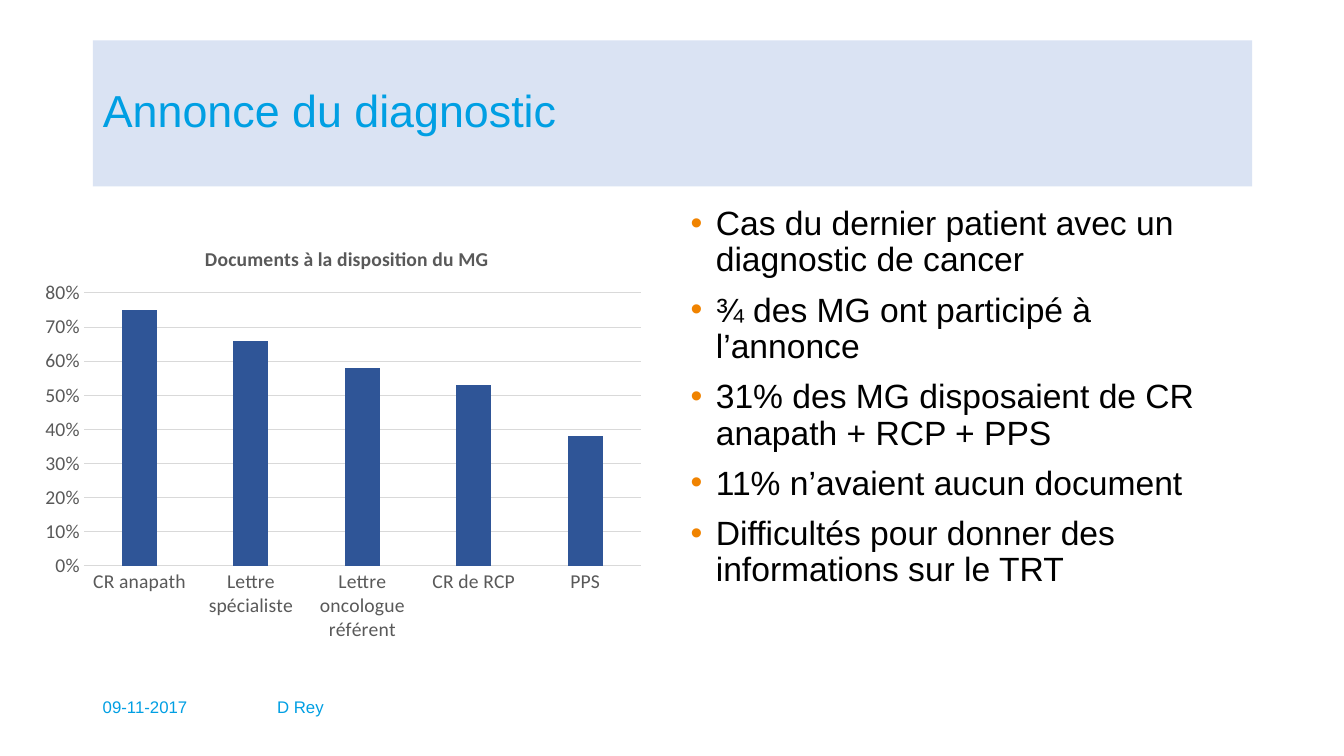
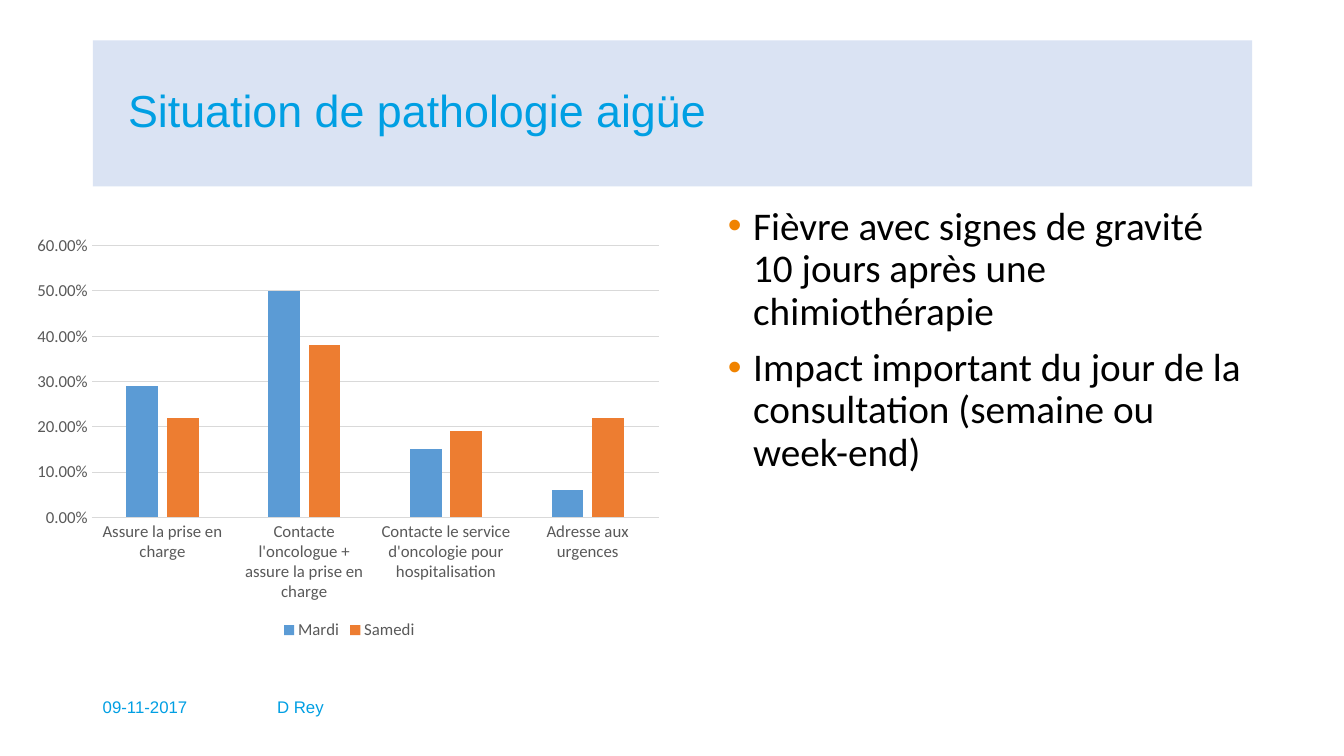
from dataclasses import dataclass

from lxml.etree import SubElement
from pptx import Presentation
from pptx.chart.chart import Chart
from pptx.chart.data import CategoryChartData
from pptx.dml.color import RGBColor
from pptx.enum.chart import XL_CHART_TYPE, XL_LEGEND_POSITION, XL_TICK_MARK
from pptx.enum.text import MSO_ANCHOR, MSO_AUTO_SIZE, PP_ALIGN
from pptx.oxml import parse_xml
from pptx.oxml.ns import nsdecls, qn
from pptx.slide import Slide
from pptx.text.text import Font
from pptx.util import Inches, Pt

BLACK = RGBColor(0x00, 0x00, 0x00)
CYAN = RGBColor(0x00, 0x9F, 0xE3)
PALE_BLUE = RGBColor(0xDA, 0xE3, 0xF3)
BULLET_ORANGE = RGBColor(0xF0, 0x83, 0x00)
NAVY = RGBColor(0x2F, 0x55, 0x97)
BLUE = RGBColor(0x5B, 0x9B, 0xD5)
ORANGE = RGBColor(0xED, 0x7D, 0x31)
AXIS_GREY = RGBColor(0x59, 0x59, 0x59)
GRID_GREY = RGBColor(0xD9, 0xD9, 0xD9)

SANS = "Arial"
CHART_FONT = "Calibri"
LINE_SPACING = 0.9
MARGIN_LEFT = 0.92
BODY_TOP = 2.0
CONTENT_RIGHT = 12.42


@dataclass(frozen=True)
class FooterItem:
    text: str
    left: float
    width: float


@dataclass(frozen=True)
class Series:
    name: str
    values: tuple[float, ...]
    color: RGBColor


@dataclass(frozen=True)
class ColumnChart:
    box: tuple[float, float, float, float]
    plot_area: tuple[float, float, float, float]
    categories: tuple[str, ...]
    series: tuple[Series, ...]
    maximum: float
    number_format: str
    label_size: int
    title: str = ""


@dataclass(frozen=True)
class Page:
    title: str
    title_inset: float
    points: tuple[str, ...]
    points_left: float
    points_height: float
    points_font: str
    points_size: int
    chart: ColumnChart


FOOTER = (
    FooterItem("09-11-2017", MARGIN_LEFT, 1.58),
    FooterItem("D Rey", 2.65, 2.64),
)

PAGES = (
    Page(
        title="Annonce du diagnostic",
        title_inset=0.1,
        points=(
            "Cas du dernier patient avec un diagnostic de cancer",
            "¾ des MG ont participé à l’annonce",
            "31% des MG disposaient de CR anapath + RCP + PPS",
            "11% n’avaient aucun document",
            "Difficultés pour donner des informations sur le TRT",
        ),
        points_left=6.75,
        points_height=4.46,
        points_font=SANS,
        points_size=24,
        chart=ColumnChart(
            box=(0.34, 2.23, 6.14, 4.23),
            plot_area=(0.08, 0.16, 0.9, 0.64),
            categories=(
                "CR anapath",
                "Lettre spécialiste",
                "Lettre oncologue référent",
                "CR de RCP",
                "PPS",
            ),
            series=(Series("Series 1", (0.75, 0.66, 0.58, 0.53, 0.38), NAVY),),
            maximum=0.8,
            number_format="0%",
            label_size=14,
            title="Documents à la disposition du MG",
        ),
    ),
    Page(
        title="Situation de pathologie aigüe",
        title_inset=0.35,
        points=(
            "Fièvre avec signes de gravité 10 jours après une chimiothérapie",
            "Impact important du jour de la consultation (semaine ou week-end)",
        ),
        points_left=7.12,
        points_height=3.71,
        points_font=CHART_FONT,
        points_size=28,
        chart=ColumnChart(
            box=(0.27, 1.74, 6.39, 4.65),
            plot_area=(0.1, 0.15, 0.88, 0.58),
            categories=(
                "Assure la prise en charge",
                "Contacte l'oncologue + assure la prise en charge",
                "Contacte le service d'oncologie pour hospitalisation",
                "Adresse aux urgences",
            ),
            series=(
                Series("Mardi", (0.29, 0.5, 0.15, 0.06), BLUE),
                Series("Samedi", (0.22, 0.38, 0.19, 0.22), ORANGE),
            ),
            maximum=0.6,
            number_format="0.00%",
            label_size=12,
        ),
    ),
)


def style_font(font: Font, name: str, size: int, color: RGBColor, bold: bool = False) -> None:
    font.name = name
    font.size = Pt(size)
    font.bold = bold
    font.color.rgb = color


def add_title(slide: Slide, page: Page) -> None:
    title = slide.shapes.title
    title.left, title.top = Inches(MARGIN_LEFT), Inches(0.4)
    title.width, title.height = Inches(CONTENT_RIGHT - MARGIN_LEFT), Inches(1.45)
    title.fill.solid()
    title.fill.fore_color.rgb = PALE_BLUE
    frame = title.text_frame
    frame.text = page.title
    frame.auto_size = MSO_AUTO_SIZE.NONE
    frame.vertical_anchor = MSO_ANCHOR.MIDDLE
    frame.margin_left = Inches(page.title_inset)
    heading = frame.paragraphs[0]
    heading.alignment = PP_ALIGN.LEFT
    heading.line_spacing = LINE_SPACING
    style_font(heading.runs[0].font, SANS, 32, CYAN)


def add_points(slide: Slide, page: Page) -> None:
    body = slide.placeholders[1]
    body.left, body.top = Inches(page.points_left), Inches(BODY_TOP)
    body.width = Inches(CONTENT_RIGHT - page.points_left)
    body.height = Inches(page.points_height)
    frame = body.text_frame
    frame.text = "\n".join(page.points)
    frame.auto_size = MSO_AUTO_SIZE.NONE
    for index, point in enumerate(frame.paragraphs):
        properties = point._p.get_or_add_pPr()
        properties.set("marL", str(Inches(0.25)))
        properties.set("indent", str(-Inches(0.25)))
        bullet_color = SubElement(properties, qn("a:buClr"))
        SubElement(bullet_color, qn("a:srgbClr"), val=str(BULLET_ORANGE))
        SubElement(properties, qn("a:buFont"), typeface=SANS)
        SubElement(properties, qn("a:buChar"), char="•")
        point.line_spacing = LINE_SPACING
        point.space_before = Pt(10 if index else 0)
        style_font(point.runs[0].font, page.points_font, page.points_size, BLACK)


def add_footer(slide: Slide) -> None:
    for item in FOOTER:
        box = slide.shapes.add_textbox(
            Inches(item.left), Inches(6.83), Inches(item.width), Inches(0.38)
        )
        frame = box.text_frame
        frame.word_wrap = True
        frame.vertical_anchor = MSO_ANCHOR.MIDDLE
        frame.text = item.text
        frame.paragraphs[0].line_spacing = LINE_SPACING
        style_font(frame.paragraphs[0].runs[0].font, SANS, 12, CYAN)


def place_chart_part(chart: Chart, tag: str, position: int, **settings: object) -> None:
    part = chart.element.find(".//" + qn(tag))
    for automatic in part.findall(qn("c:layout")):
        part.remove(automatic)
    entries = "".join(f'<c:{name} val="{value}"/>' for name, value in settings.items())
    layout = parse_xml(
        f"<c:layout {nsdecls('c')}><c:manualLayout>{entries}</c:manualLayout></c:layout>"
    )
    part.insert(position, layout)


def style_axes(chart: Chart, content: ColumnChart) -> None:
    for axis in (chart.category_axis, chart.value_axis):
        axis.major_tick_mark = XL_TICK_MARK.NONE
        axis.minor_tick_mark = XL_TICK_MARK.NONE
        style_font(axis.tick_labels.font, CHART_FONT, content.label_size, AXIS_GREY)
    values = chart.value_axis
    values.minimum_scale = 0
    values.maximum_scale = content.maximum
    values.major_unit = 0.1
    values.tick_labels.number_format = content.number_format
    values.tick_labels.number_format_is_linked = False
    values.format.line.fill.background()
    values.has_major_gridlines = True
    for line in (chart.category_axis.format.line, values.major_gridlines.format.line):
        line.color.rgb = GRID_GREY
        line.width = Pt(0.75)


def add_column_chart(slide: Slide, content: ColumnChart) -> None:
    data = CategoryChartData(number_format=content.number_format)
    data.categories = content.categories
    for series in content.series:
        data.add_series(series.name, series.values)
    box = [Inches(length) for length in content.box]
    chart = slide.shapes.add_chart(XL_CHART_TYPE.COLUMN_CLUSTERED, *box, data).chart
    style_font(chart.font, CHART_FONT, 10, BLACK)
    style_axes(chart, content)

    plot = chart.plots[0]
    plot.vary_by_categories = False
    plot.gap_width = 219
    plot.overlap = -27
    for columns, series in zip(plot.series, content.series):
        columns.format.fill.solid()
        columns.format.fill.fore_color.rgb = series.color

    left, top, width, height = content.plot_area
    place_chart_part(
        chart, "c:plotArea", 0, layoutTarget="inner", xMode="edge", yMode="edge",
        x=left, y=top, w=width, h=height,
    )

    chart.has_title = bool(content.title)
    if content.title:
        heading = chart.chart_title.text_frame
        heading.text = content.title
        style_font(heading.paragraphs[0].runs[0].font, CHART_FONT, 14, AXIS_GREY, True)
        place_chart_part(chart, "c:title", 1, xMode="edge", yMode="edge", x=0.27, y=0.04)

    chart.has_legend = len(content.series) > 1
    if chart.has_legend:
        chart.legend.position = XL_LEGEND_POSITION.BOTTOM
        chart.legend.include_in_layout = False
        style_font(chart.legend.font, CHART_FONT, 12, AXIS_GREY)


def main() -> None:
    presentation = Presentation()
    presentation.slide_width = Inches(13.33)
    presentation.slide_height = Inches(7.5)
    for page in PAGES:
        slide = presentation.slides.add_slide(presentation.slide_layouts[1])
        add_title(slide, page)
        add_points(slide, page)
        add_footer(slide)
        add_column_chart(slide, page.chart)
    presentation.save("out.pptx")


if __name__ == "__main__":
    main()
